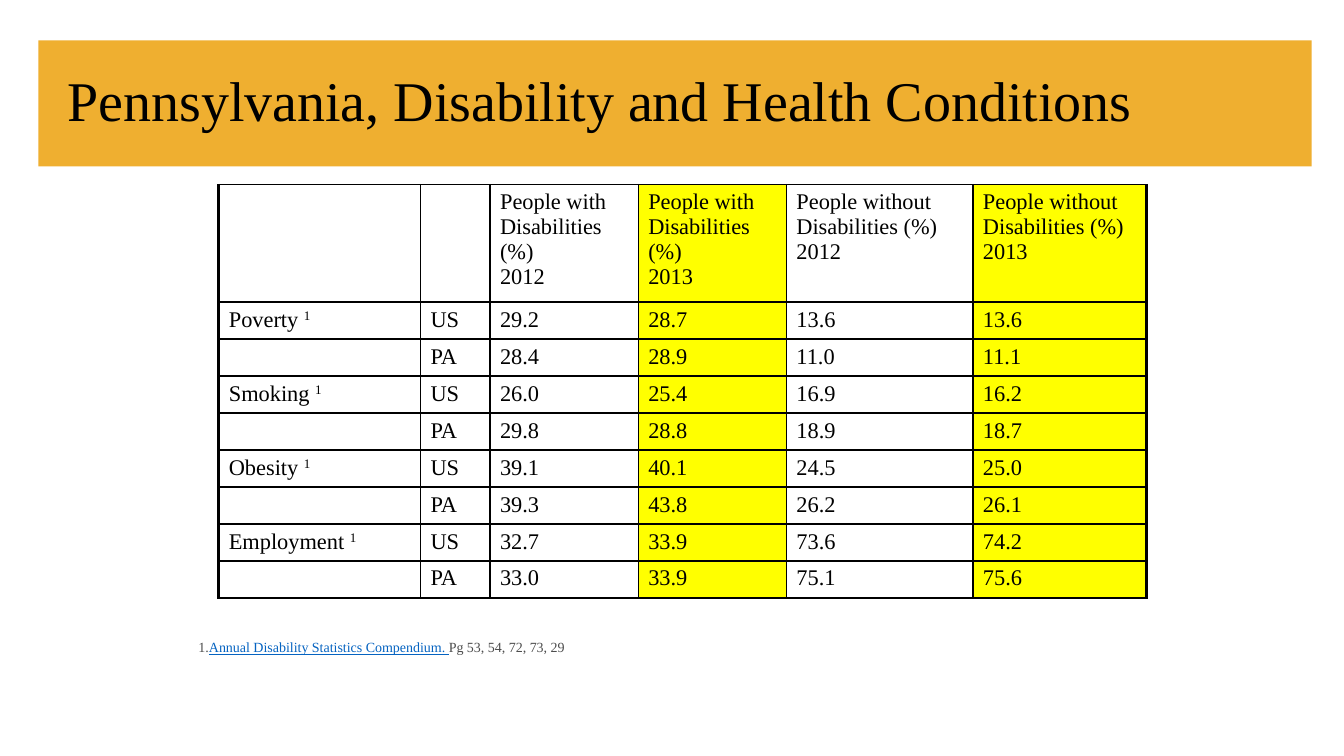
import lxml.etree
import pptx
import pptx.dml.color
import pptx.enum.shapes
import pptx.enum.text
import pptx.oxml.ns
import pptx.util

Inches = pptx.util.Inches
qn = pptx.oxml.ns.qn


def color(hex_code):
    return pptx.dml.color.RGBColor.from_string(hex_code)


def add_text(paragraph, text, size, hex_code, **extra):
    run = paragraph.add_run()
    run.text = text
    run.font.color.rgb = color(hex_code)
    formats = {"name": "Times New Roman", "size": pptx.util.Pt(size), **extra}
    for key, value in formats.items():
        setattr(run.font, key, value)
    return run


deck = pptx.Presentation()
deck.slide_width = Inches(13.33)
deck.slide_height = Inches(7.5)
slide = deck.slides.add_slide(deck.slide_layouts[6])

banner = slide.shapes.add_shape(
    pptx.enum.shapes.MSO_SHAPE.RECTANGLE,
    Inches(0.38), Inches(0.4), Inches(12.63), Inches(1.25))
banner.shadow.inherit = False
banner.fill.solid()
banner.fill.fore_color.rgb = color("EFAF30")
banner.line.fill.background()

title = slide.shapes.add_textbox(Inches(0.57), Inches(0.4), Inches(11.5), Inches(1.25)).text_frame
title.word_wrap = True
title.vertical_anchor = pptx.enum.text.MSO_ANCHOR.MIDDLE
title.paragraphs[0].line_spacing = 0.9
add_text(title.paragraphs[0], "Pennsylvania, Disability and Health Conditions", 40, "000000")

rates = [
    ("", "", "People with Disabilities (%)\n2012", "People with Disabilities (%)\n2013",
     "People without Disabilities (%)\n2012", "People without Disabilities (%)\n2013"),
    ("Poverty ", "US", "29.2", "28.7", "13.6", "13.6"),
    ("", "PA", "28.4", "28.9", "11.0", "11.1"),
    ("Smoking ", "US", "26.0", "25.4", "16.9", "16.2"),
    ("", "PA", "29.8", "28.8", "18.9", "18.7"),
    ("Obesity ", "US", "39.1", "40.1", "24.5", "25.0"),
    ("", "PA", "39.3", "43.8", "26.2", "26.1"),
    ("Employment ", "US", "32.7", "33.9", "73.6", "74.2"),
    ("", "PA", "33.0", "33.9", "75.1", "75.6"),
]
column_widths = [2, 0.69, 1.47, 1.47, 1.85, 1.72]
row_heights = [1.09] + [0.34] * 8
conditions = slide.shapes.add_table(
    len(rates), len(column_widths), Inches(2.17), Inches(1.83),
    Inches(sum(column_widths)), Inches(sum(row_heights))).table
conditions.first_row = False
conditions.horz_banding = False
for column, width in zip(conditions.columns, column_widths):
    column.width = Inches(width)
for row, height in zip(conditions.rows, row_heights):
    row.height = Inches(height)

for r, values in enumerate(rates):
    for c, value in enumerate(values):
        cell = conditions.cell(r, c)
        for n, line in enumerate(value.split("\n")):
            paragraph = cell.text_frame.paragraphs[0] if n == 0 else cell.text_frame.add_paragraph()
            if line:
                add_text(paragraph, line, 16, "000000")
            else:
                lxml.etree.SubElement(paragraph._p, qn("a:endParaRPr"), sz="1600")
        if c == 0 and value:
            footnote_mark = add_text(cell.text_frame.paragraphs[0], "1", 16, "000000")
            footnote_mark._r.get_or_add_rPr().set("baseline", "30000")

        thick_edges = {"L": c in (0, 5), "R": c in (4, 5), "T": False, "B": r == len(rates) - 1}
        for side, thick in thick_edges.items():
            edge = lxml.etree.SubElement(
                cell._tc.get_or_add_tcPr(), qn("a:ln" + side),
                w=str(pptx.util.Pt(2.25 if thick else 1)))
            edge_fill = lxml.etree.SubElement(edge, qn("a:solidFill"))
            lxml.etree.SubElement(edge_fill, qn("a:srgbClr"), val="000000")
        cell.fill.solid()
        cell.fill.fore_color.rgb = color("FFFF00" if c in (3, 5) else "FFFFFF")

footnote = slide.shapes.add_textbox(Inches(1.87), Inches(6.32), Inches(9.99), Inches(1.33)).text_frame
footnote.word_wrap = True
citation = footnote.paragraphs[0]
citation.line_spacing = 0.8
indents = citation._p.get_or_add_pPr()
indents.set("marL", str(Inches(0.25)))
indents.set("indent", str(Inches(-0.25)))
add_text(citation, "1.", 10, "4D4D4D")
add_text(citation, "Annual Disability Statistics Compendium. ", 10, "0563C1", underline=True)
add_text(citation, "Pg 53, 54, 72, 73, 29", 10, "4D4D4D")

deck.save("out.pptx")
